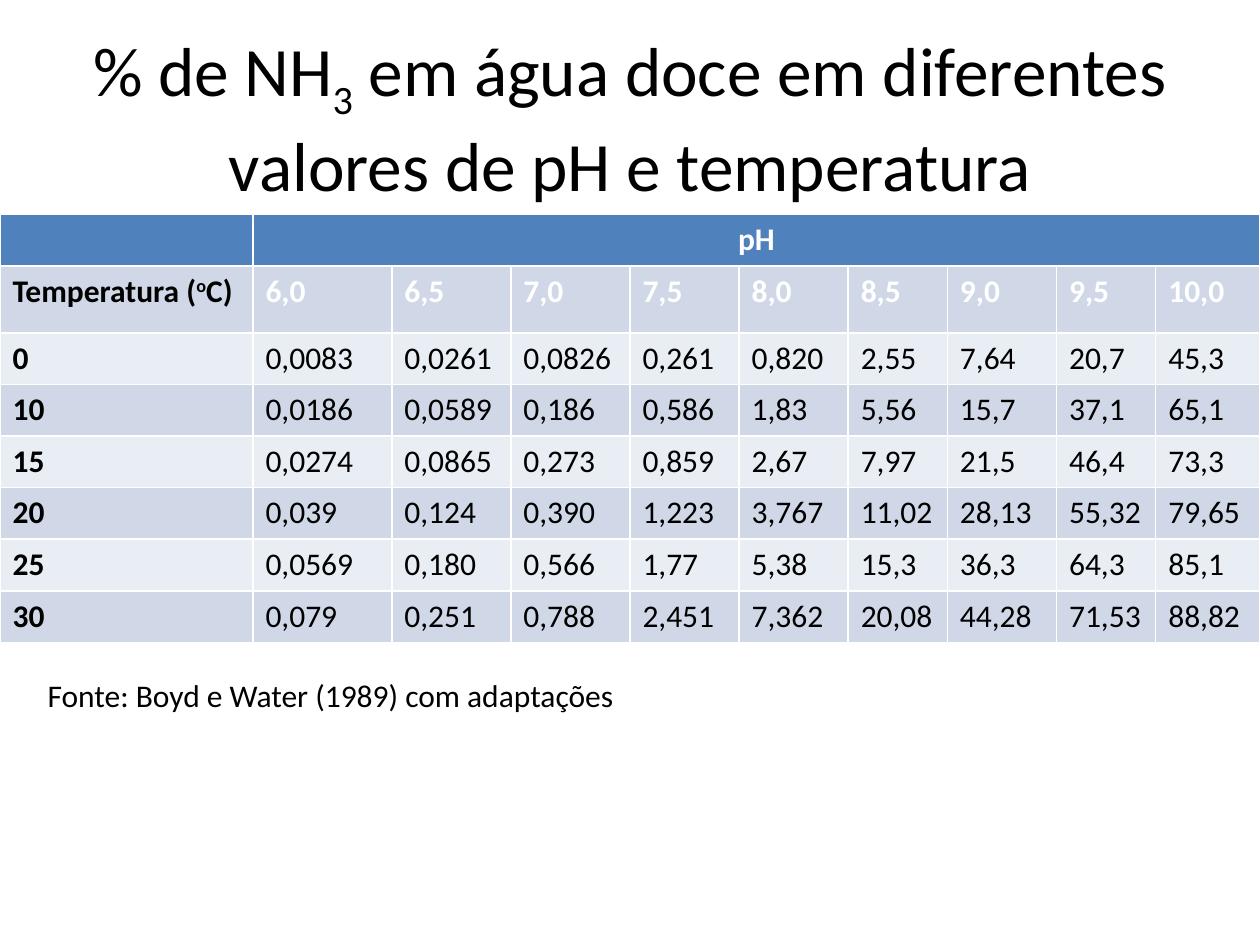
"""Build a slide with a table of the NH3 share in fresh water by pH and temperature."""
from dataclasses import dataclass

import pptx
import pptx.dml.color
import pptx.enum.text
import pptx.slide
import pptx.table
import pptx.text.text
import pptx.util

Cm = pptx.util.Cm
ALIGN = pptx.enum.text.PP_ALIGN
ANCHOR = pptx.enum.text.MSO_ANCHOR


@dataclass(frozen=True)
class Theme:
    font: str = "Calibri"
    title_size: float = 39.6
    body_size: float = 18
    ink: str = "000000"
    paper: str = "FFFFFF"
    header: str = "4F81BD"
    bands: tuple[str, str] = ("E9EDF4", "D0D8E8")


@dataclass(frozen=True)
class Piece:
    text: str
    baseline: int = 0


@dataclass(frozen=True)
class TextBlock:
    left: float
    top: float
    width: float
    height: float
    pieces: tuple[Piece, ...]
    size: float
    align: ALIGN
    anchor: ANCHOR
    auto_size: pptx.enum.text.MSO_AUTO_SIZE


@dataclass(frozen=True)
class Reading:
    temperature: str
    shares: str


THEME = Theme()

TITLE = TextBlock(
    1.27, 0.76, 22.86, 3.18,
    (Piece("% de NH"), Piece("3", -25),
     Piece(" em água doce em diferentes valores de pH e temperatura")),
    THEME.title_size, ALIGN.CENTER, ANCHOR.MIDDLE, pptx.enum.text.MSO_AUTO_SIZE.NONE,
)
SOURCE = TextBlock(
    0.71, 13.51, 16, 1.03, (Piece("Fonte: Boyd e Water (1989) com adaptações"),),
    THEME.body_size, ALIGN.LEFT, ANCHOR.TOP, pptx.enum.text.MSO_AUTO_SIZE.SHAPE_TO_FIT_TEXT,
)

TABLE_TOP = 4.32
COLUMN_WIDTHS = (5.1, 2.8, 2.4, 2.4, 2.2, 2.2, 2, 2.2, 2, 2.1)
ROW_HEIGHT = 1.04
PH_ROW_HEIGHT = 1.35
TEMPERATURE_LABEL = (Piece("Temperatura ("), Piece("o", 30), Piece("C)"))
PH_VALUES = "6,0 6,5 7,0 7,5 8,0 8,5 9,0 9,5 10,0"
READINGS = (
    Reading("0", "0,0083 0,0261 0,0826 0,261 0,820 2,55 7,64 20,7 45,3"),
    Reading("10", "0,0186 0,0589 0,186 0,586 1,83 5,56 15,7 37,1 65,1"),
    Reading("15", "0,0274 0,0865 0,273 0,859 2,67 7,97 21,5 46,4 73,3"),
    Reading("20", "0,039 0,124 0,390 1,223 3,767 11,02 28,13 55,32 79,65"),
    Reading("25", "0,0569 0,180 0,566 1,77 5,38 15,3 36,3 64,3 85,1"),
    Reading("30", "0,079 0,251 0,788 2,451 7,362 20,08 44,28 71,53 88,82"),
)


def write(para: pptx.text.text._Paragraph, pieces: tuple[Piece, ...], color: str,
          size: float = THEME.body_size, bold: bool = False) -> None:
    """Add the pieces to a paragraph in one format."""
    style = {"name": THEME.font, "size": pptx.util.Pt(size), "bold": bold}
    for piece in pieces:
        span = para.add_run()
        span.text = piece.text
        for name, value in style.items():
            setattr(span.font, name, value)
        span.font.color.rgb = pptx.dml.color.RGBColor.from_string(color)
        if piece.baseline:
            span.font._element.set("baseline", str(piece.baseline * 1000))


def draw_text(page: pptx.slide.Slide, block: TextBlock) -> None:
    """Draw a wrapped text box."""
    lengths = (block.left, block.top, block.width, block.height)
    frame = page.shapes.add_textbox(*map(Cm, lengths)).text_frame
    settings = {"word_wrap": True, "auto_size": block.auto_size, "vertical_anchor": block.anchor}
    for name, value in settings.items():
        setattr(frame, name, value)
    para = frame.paragraphs[0]
    para.alignment = block.align
    write(para, block.pieces, THEME.ink, block.size)


def fill_cell(cell: pptx.table._Cell, color: str) -> None:
    """Give a cell a solid fill."""
    cell.fill.solid()
    cell.fill.fore_color.rgb = pptx.dml.color.RGBColor.from_string(color)


def fill_row(table: pptx.table.Table, row: int, label: tuple[Piece, ...], values: str,
             value_color: str, value_bold: bool) -> None:
    """Write a bold row label and its values on a banded fill."""
    for column, text in enumerate(("", *values.split())):
        cell = table.cell(row, column)
        fill_cell(cell, THEME.bands[row % 2])
        para = cell.text_frame.paragraphs[0]
        if column == 0:
            write(para, label, THEME.ink, bold=True)
        else:
            write(para, (Piece(text),), value_color, bold=value_bold)


def draw_table(page: pptx.slide.Slide) -> None:
    """Draw the table of shares by temperature and pH."""
    heights = (ROW_HEIGHT, PH_ROW_HEIGHT, *[ROW_HEIGHT] * len(READINGS))
    table = page.shapes.add_table(
        len(heights), len(COLUMN_WIDTHS), Cm(0), Cm(TABLE_TOP),
        Cm(sum(COLUMN_WIDTHS)), Cm(sum(heights)),
    ).table
    for column, width in zip(table.columns, COLUMN_WIDTHS):
        column.width = Cm(width)
    for row, height in zip(table.rows, heights):
        row.height = Cm(height)

    for column in range(len(COLUMN_WIDTHS)):
        fill_cell(table.cell(0, column), THEME.header)
    heading = table.cell(0, 1)
    heading.merge(table.cell(0, len(COLUMN_WIDTHS) - 1))
    para = heading.text_frame.paragraphs[0]
    para.alignment = ALIGN.CENTER
    write(para, (Piece("pH"),), THEME.paper, bold=True)

    fill_row(table, 1, TEMPERATURE_LABEL, PH_VALUES, THEME.paper, True)
    for row, reading in enumerate(READINGS, start=2):
        fill_row(table, row, (Piece(reading.temperature),), reading.shares, THEME.ink, False)


def main() -> None:
    """Build and save the deck."""
    deck = pptx.Presentation()
    deck.slide_width, deck.slide_height = Cm(25.4), Cm(19.05)
    page = deck.slides.add_slide(deck.slide_layouts[6])
    draw_text(page, TITLE)
    draw_table(page)
    draw_text(page, SOURCE)
    deck.save("out.pptx")


if __name__ == "__main__":
    main()
